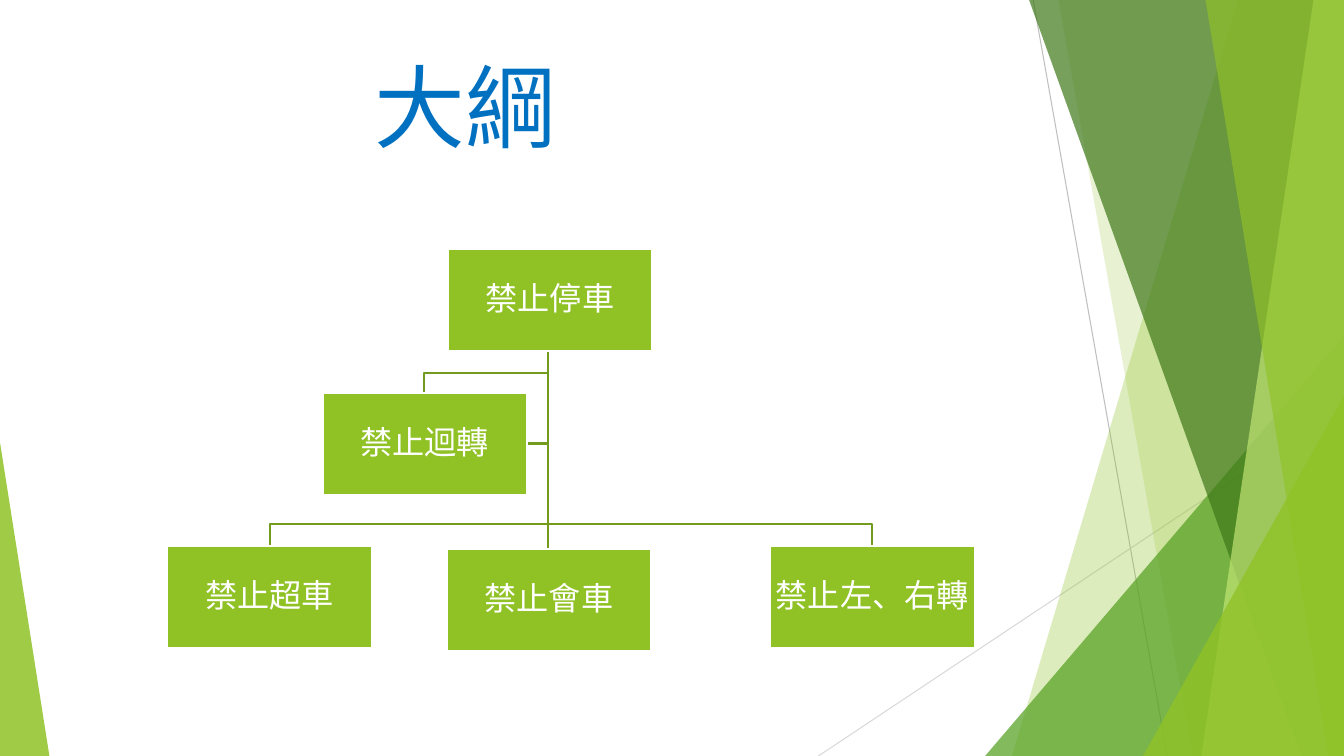
"""Build the outline slide: an organisation chart of traffic bans."""
from lxml import etree
from pptx import Presentation
from pptx.dml.color import RGBColor
from pptx.enum.shapes import MSO_CONNECTOR, MSO_SHAPE
from pptx.enum.text import MSO_ANCHOR, PP_ALIGN
from pptx.oxml.ns import qn
from pptx.util import Pt

LINE = MSO_CONNECTOR.STRAIGHT
RECT, TRI = MSO_SHAPE.RECTANGLE, MSO_SHAPE.ISOSCELES_TRIANGLE
MID, CENTER = MSO_ANCHOR.MIDDLE, PP_ALIGN.CENTER

WIDE, HIGH = 960, 540
COLORS = {
    "lime": "90C226", "green": "54A021", "dark": "3F7819", "pale": "C0E474",
    "link": "739B1E", "blue": "0070C0", "white": "FFFFFF",
    "gray": "BFBFBF", "mist": "D9D9D9",
}
TITLE = ("大綱", (260.6, 32.4, 676.8, 103.7), 64.8, "Noto Sans CJK SC")
RAYS = [
    ((738, 0), (833.8, HIGH), "gray"),
    ((WIDE, 290.2), (584.6, HIGH), "mist"),
]
# band: top x, foot x; peak: left, top, width, adjustment
DECOR = [
    ("band", (884.2, 722.9), "lime", 30),
    ("band", (756, 851.8), "lime", 20),
    ("peak", (703.7, 239.8, 256.3, 1), "green", 72),
    ("band", (735.1, 929.5), "dark", 70),
    ("band", (938.2, 858.2), "pale", 70),
    ("band", (861.1, 949), "lime", 65),
    ("peak", (816.5, 283, 143.5, 1), "lime", 80),
    ("peak", (0, 316.1, 35.3, 0), "lime", 85),
]
BOX = (146.2, 72.7)
BOXES = [
    ("禁止超車", 119.5, 390.2),
    ("禁止會車", 319, 392.4),
    ("禁止左、右轉", 550.1, 390.2),
    ("禁止迴轉", 230.4, 280.8),
    ("禁止停車", 319.7, 177.8),
]
TRUNK, START = 391.7, 249.8
# bend y, end x, end y
LINKS = [
    (316.8, 376.6, 316.8),
    (374.4, 622.8, 390.2),
    (377.3, TRUNK, 392.4),
    (374.4, 193, 390.2),
    (266.4, 303.1, 281.5),
]


def rgb(name):
    return RGBColor.from_string(COLORS[name])


def paint(shape, color, alpha=100):
    shape.shadow.inherit = False
    shape.fill.solid()
    shape.fill.fore_color.rgb = rgb(color)
    if alpha < 100:
        tone = shape.fill._xPr.find(".//" + qn("a:srgbClr"))
        etree.SubElement(tone, qn("a:alpha")).set("val", str(alpha * 1000))


def stroke(shape, color, width):
    shape.line.color.rgb = rgb(color)
    shape.line.width = Pt(width)


def trace(shapes, points, close):
    start, *rest = [(Pt(x), Pt(y)) for x, y in points]
    form = shapes.build_freeform(*start)
    form.add_line_segments(rest, close=close)
    shape = form.convert_to_shape()
    shape.shadow.inherit = False
    return shape


def write(para, text, size, face, color):
    run = para.add_run()
    run.text = text
    font = run.font
    font.size, font.name = Pt(size), face
    font.color.rgb = rgb(color)
    etree.SubElement(font._element, qn("a:ea")).set("typeface", face)


def draw_decor(shapes):
    for head, tail, color in RAYS:
        ray = shapes.add_connector(LINE, *map(Pt, head + tail))
        stroke(ray, color, 0.75)
        etree.SubElement(ray._element.spPr, qn("a:effectLst"))
    for kind, place, color, alpha in DECOR:
        if kind == "band":
            top, foot = place
            points = [(top, 0), (WIDE, 0), (WIDE, HIGH), (foot, HIGH)]
            shape = trace(shapes, points, True)
        else:
            left, top, width, skew = place
            shape = shapes.add_shape(
                TRI, Pt(left), Pt(top), Pt(width), Pt(HIGH - top))
            shape.adjustments[0] = skew
        paint(shape, color, alpha)
        shape.line.fill.background()


def draw_chart(shapes):
    for bend, x, y in LINKS:
        points = [(TRUNK, START), (TRUNK, bend), (x, bend)]
        if y != bend:
            points.append((x, y))
        link = trace(shapes, points, False)
        link.fill.background()
        stroke(link, "link", 1.5)
    for text, x, y in BOXES:
        box = shapes.add_shape(RECT, *map(Pt, (x, y) + BOX))
        paint(box, "lime")
        stroke(box, "white", 1.5)
        frame = box.text_frame
        frame.word_wrap = True
        frame.vertical_anchor = MID
        frame.margin_left = frame.margin_right = Pt(1.44)
        frame.margin_top = frame.margin_bottom = Pt(1.44)
        para = frame.paragraphs[0]
        para.alignment = CENTER
        para.line_spacing = 0.9
        write(para, text, 23, "Roboto", "white")


def main():
    deck = Presentation()
    deck.slide_width, deck.slide_height = Pt(WIDE), Pt(HIGH)
    shapes = deck.slides.add_slide(deck.slide_layouts[6]).shapes
    draw_decor(shapes)
    text, place, size, face = TITLE
    frame = shapes.add_textbox(*map(Pt, place)).text_frame
    frame.word_wrap = True
    write(frame.paragraphs[0], text, size, face, "blue")
    draw_chart(shapes)
    deck.save("out.pptx")


if __name__ == "__main__":
    main()
